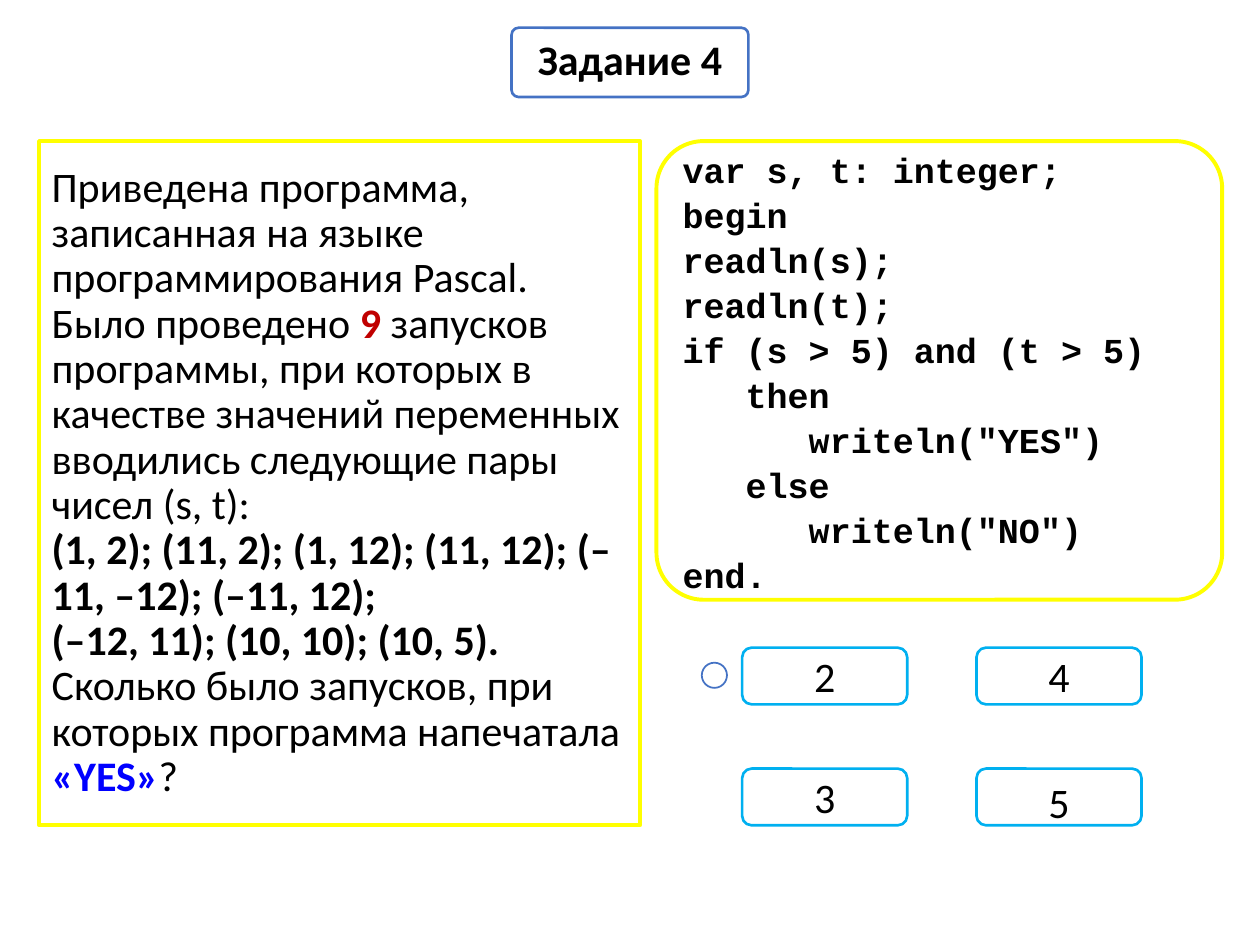
from copy import deepcopy
from dataclasses import dataclass

from lxml import etree
from pptx import Presentation
from pptx.dml.color import RGBColor
from pptx.enum.shapes import MSO_SHAPE
from pptx.enum.text import MSO_ANCHOR, MSO_AUTO_SIZE, PP_ALIGN
from pptx.oxml.ns import qn
from pptx.util import Inches, Pt

ROUNDED = MSO_SHAPE.ROUNDED_RECTANGLE
OVAL = MSO_SHAPE.OVAL
MIDDLE = MSO_ANCHOR.MIDDLE
NO_AUTOFIT = MSO_AUTO_SIZE.NONE
LEFT, CENTER = PP_ALIGN.LEFT, PP_ALIGN.CENTER


@dataclass(frozen=True)
class Theme:
    paper: str = "FFFFFF"
    ink: str = "000000"
    red: str = "C00000"
    blue: str = "0000FF"
    heading_line: str = "4472C4"
    panel_line: str = "FFFF00"
    answer_line: str = "00B0F0"
    text_font: str = "Calibri"
    code_font: str = "Courier New"
    text_size: int = 24
    code_size: int = 20


THEME = Theme()
CORNER = 0.103
PANEL_TOP = 1.12
ANSWER_LEFT, ANSWER_TOP = 5.89, 5.14
ANSWER_STEP_X, ANSWER_STEP_Y = 1.86, 0.96
ANSWER_SIZE = (1.31, 0.45)

# Each part: text, colour, bold
QUESTION = [
    ("Приведена программа, записанная на языке программирования Pascal. \n"
     "Было проведено ", THEME.ink, False),
    ("9", THEME.red, True),
    (" запусков программы, при которых в качестве значений переменных "
     "вводились следующие пары чисел (s, t):\n", THEME.ink, False),
    ("(1, 2); (11, 2); (1, 12); (11, 12); (–11, –12); (–11, 12); \n"
     "(–12, 11); (10, 10); (10, 5).\n", THEME.ink, True),
    ("Сколько было запусков, при которых программа напечатала ",
     THEME.ink, False),
    ("«YES»", THEME.blue, True),
    ("?", THEME.ink, False),
]

CODE = """var s, t: integer;
begin
readln(s);
readln(t);
if (s > 5) and (t > 5)
   then 
      writeln("YES")
   else
      writeln("NO")
end."""

# Each answer: text, column, row, line spacing
ANSWERS = [("3", 0, 1, 1.0), ("5", 1, 1, 1.2), ("4", 1, 0, 1.0)]


def place(shape, left, top, width, height):
    shape.left, shape.top = Inches(left), Inches(top)
    shape.width, shape.height = Inches(width), Inches(height)


def outline(shape, color, weight):
    shape.fill.solid()
    shape.fill.fore_color.rgb = RGBColor.from_string(THEME.paper)
    shape.line.color.rgb = RGBColor.from_string(color)
    shape.line.width = Pt(weight)


def add_outlined(slide, kind, box, color, weight):
    shape = slide.shapes.add_shape(kind, *map(Inches, box))
    shape.shadow.inherit = False
    outline(shape, color, weight)
    return shape


def add_run(paragraph, text, color, bold, font, size):
    """Add text; each newline becomes a line break of the same format."""
    for number, line in enumerate(text.split("\n")):
        if number:
            paragraph.add_line_break()
            line_break = paragraph._p.findall(qn("a:br"))[-1]
            line_break.append(deepcopy(run._r.rPr))
        if line:
            run = paragraph.add_run()
            run.text = line
            run.font.name = font
            run.font.size = Pt(size)
            run.font.bold = bold
            run.font.color.rgb = RGBColor.from_string(color)


def write(shape, parts, align=CENTER, spacing=1.0,
          font=THEME.text_font, size=THEME.text_size):
    frame = shape.text_frame
    frame.word_wrap = True
    frame.auto_size = NO_AUTOFIT
    frame.vertical_anchor = MIDDLE
    paragraph = frame.paragraphs[0]
    paragraph.alignment = align
    paragraph.line_spacing = spacing
    paragraph.space_before = Pt(0)
    for text, color, bold in parts:
        add_run(paragraph, text, color, bold, font, size)


def answer_box(column, row):
    return (ANSWER_LEFT + column * ANSWER_STEP_X,
            ANSWER_TOP + row * ANSWER_STEP_Y, *ANSWER_SIZE)


def add_heading(slide):
    heading = add_outlined(slide, ROUNDED, (4.06, 0.22, 1.88, 0.55),
                           THEME.heading_line, 1.5)
    heading.adjustments[0] = CORNER
    write(heading, [("Задание 4", THEME.ink, True)], spacing=0.9)


def fill_question(question):
    place(question, 0.31, PANEL_TOP, 4.77, 5.43)
    outline(question, THEME.panel_line, 2.25)
    write(question, QUESTION, LEFT, 0.9)


def fill_first_answer(answer):
    """Turn the body placeholder into a rounded answer without a bullet."""
    place(answer, *answer_box(0, 0))
    geometry = etree.SubElement(answer._element.spPr, qn("a:prstGeom"),
                                prst="roundRect")
    etree.SubElement(geometry, qn("a:avLst"))
    outline(answer, THEME.answer_line, 1.5)
    properties = answer.text_frame.paragraphs[0]._p.get_or_add_pPr()
    properties.set("marL", "0")
    properties.set("indent", "0")
    etree.SubElement(properties, qn("a:buNone"))
    write(answer, [("2", THEME.ink, False)])


def add_answers(slide):
    for text, column, row, spacing in ANSWERS:
        answer = add_outlined(slide, ROUNDED, answer_box(column, row),
                              THEME.answer_line, 1.5)
        write(answer, [(text, THEME.ink, False)], spacing=spacing)


def add_code(slide):
    panel = add_outlined(slide, ROUNDED, (5.21, PANEL_TOP, 4.49, 3.64),
                         THEME.panel_line, 2.25)
    panel.adjustments[0] = CORNER
    write(panel, [(CODE, THEME.ink, True)], LEFT, 1.07,
          THEME.code_font, THEME.code_size)


def main():
    deck = Presentation()
    deck.slide_width, deck.slide_height = Inches(10), Inches(7.5)
    slide = deck.slides.add_slide(deck.slide_layouts[1])
    add_heading(slide)
    fill_question(slide.shapes.title)
    fill_first_answer(slide.placeholders[1])
    add_answers(slide)
    add_outlined(slide, OVAL, (5.57, 5.26, 0.2, 0.2), THEME.heading_line, 1)
    add_code(slide)
    deck.save("out.pptx")


if __name__ == "__main__":
    main()
